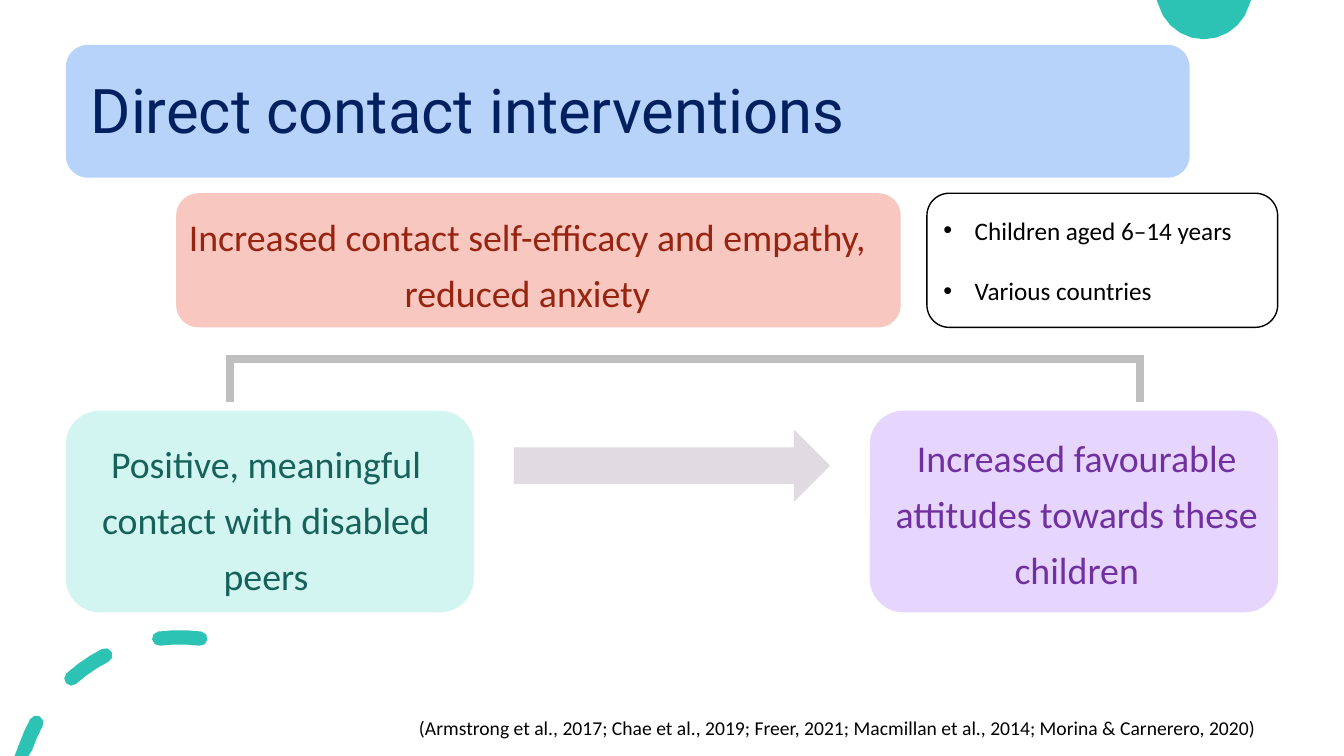
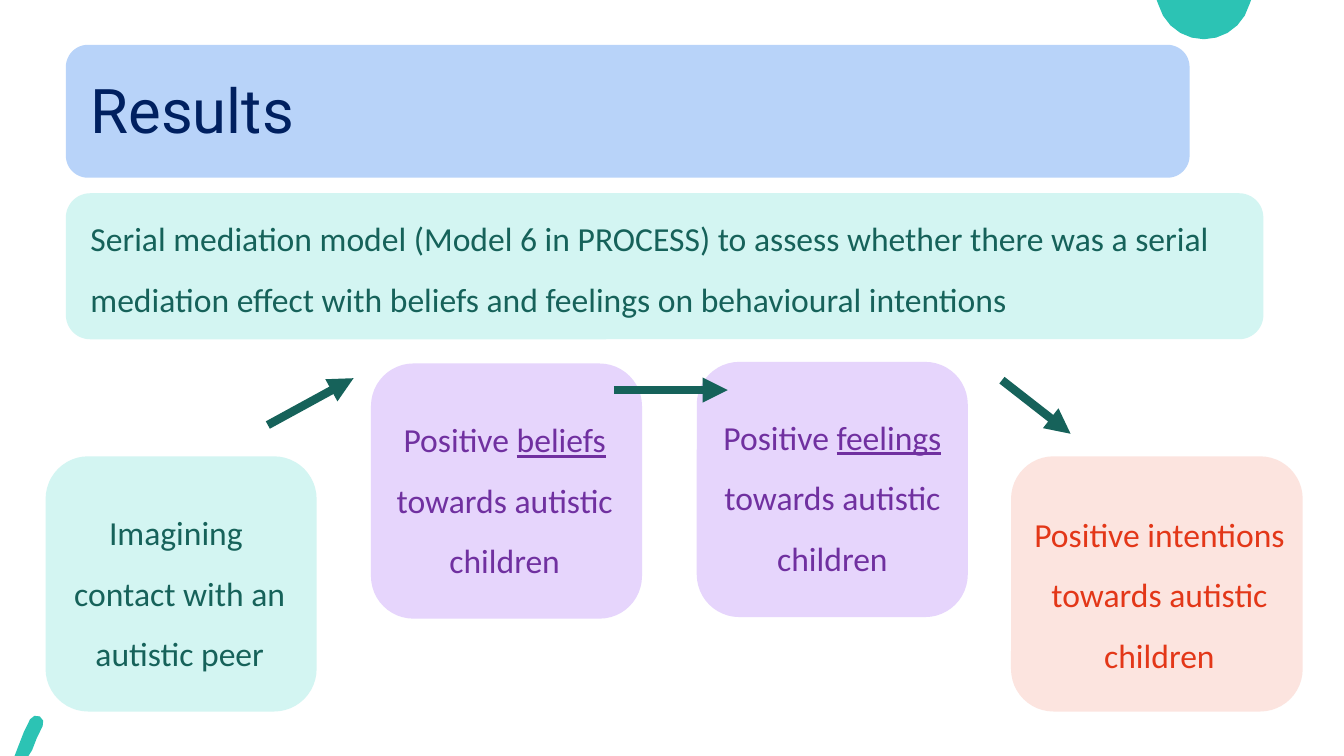
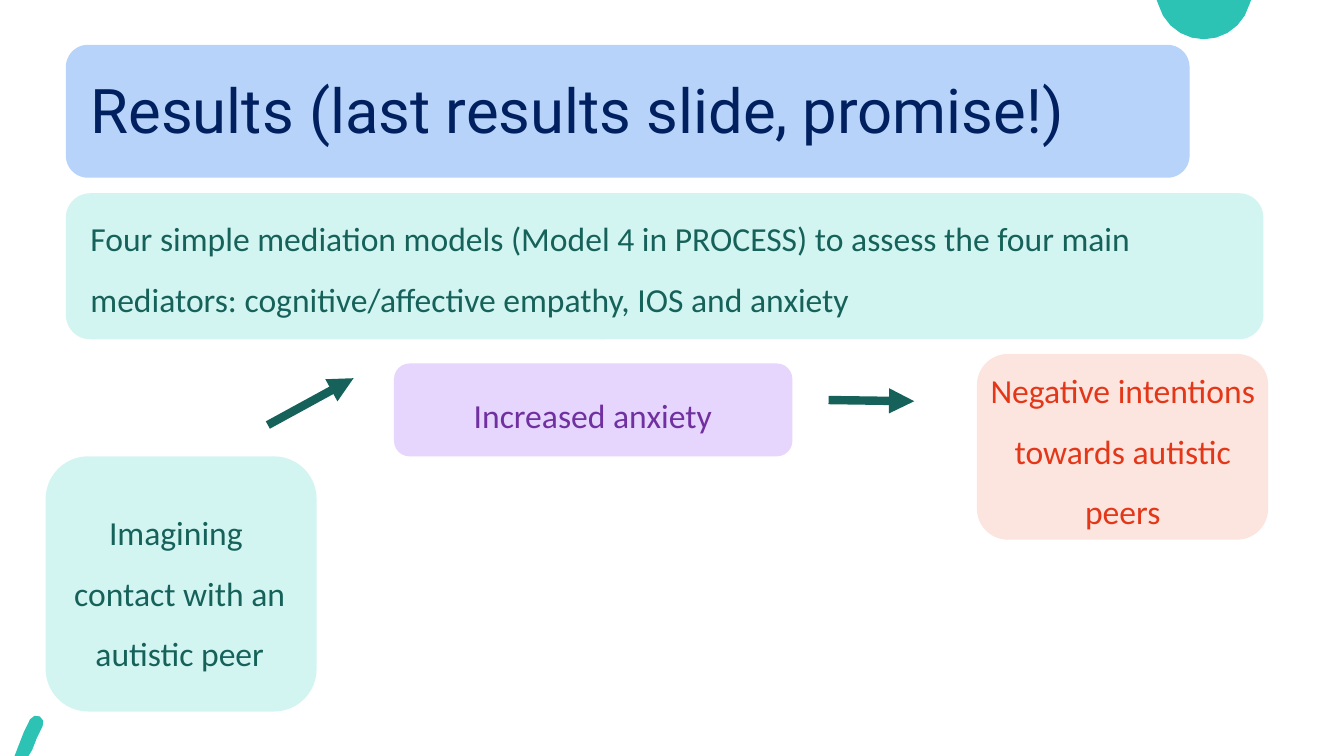
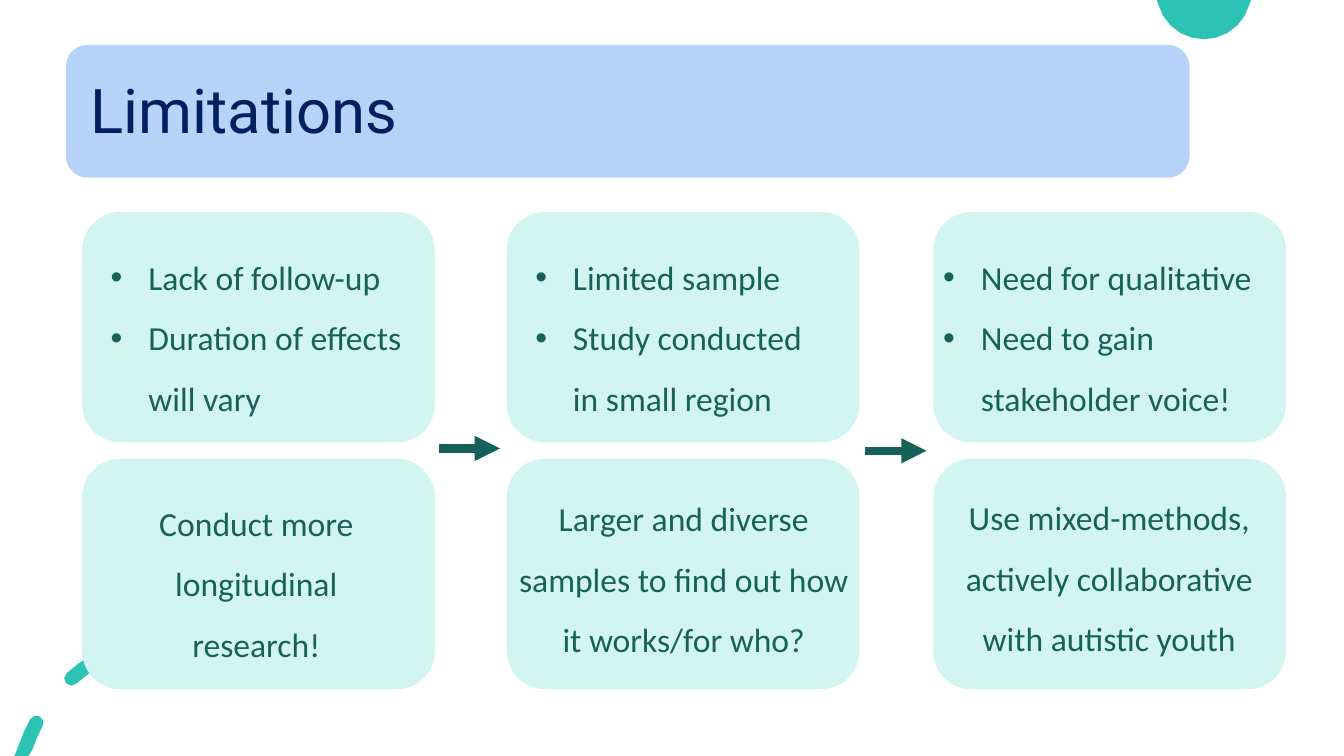
from math import cos, radians, sin

from lxml.etree import SubElement
from pptx import Presentation
from pptx.dml.color import RGBColor
from pptx.enum.shapes import MSO_CONNECTOR, MSO_SHAPE
from pptx.enum.text import MSO_ANCHOR, MSO_AUTO_SIZE, PP_ALIGN
from pptx.oxml.ns import qn
from pptx.util import Cm, Pt

ROUNDED, ARROW = MSO_SHAPE.ROUNDED_RECTANGLE, MSO_SHAPE.RIGHT_ARROW
STRAIGHT = MSO_CONNECTOR.STRAIGHT
LEFT, CENTER = PP_ALIGN.LEFT, PP_ALIGN.CENTER
MIDDLE = MSO_ANCHOR.MIDDLE
NO_AUTOFIT = MSO_AUTO_SIZE.NONE

rgb = RGBColor.from_string
TEAL, BAND_BLUE, NAVY = "2CC3B4", "B8D3F9", "002060"
MINT, GREEN = "D3F5F2", "16625A"
LILAC, PURPLE = "E6D5FC", "7030A0"
PEACH, ORANGE = "FCE4DF", "E33718"
ROSE, RUST = "F8C8C0", "972410"
ARROW_GREY, BRACKET_GREY, BLACK = "DFDBE0", "BFBFBF", "000000"

SLIDE_WIDTH, SLIDE_HEIGHT = 33.87, 19.05
UNDERLINED = {"beliefs", "feelings"}


def add_panel(slide, box, fill, preset=ROUNDED):
    """Add a filled shape without outline; box is left, top, width, height in cm."""
    panel = slide.shapes.add_shape(preset, *map(Cm, box))
    panel.shadow.inherit = False
    panel.fill.solid()
    panel.fill.fore_color.rgb = rgb(fill)
    panel.line.fill.background()
    return panel


def write(frame, paragraphs, colour, size=24, align=CENTER, spacing=1.5,
          font="Calibri", indent=0, gap=0):
    """Fill a text frame; each paragraph is a list of run texts."""
    frame.word_wrap = True
    frame.auto_size = NO_AUTOFIT
    for number, runs in enumerate(paragraphs):
        paragraph = frame.add_paragraph() if number else frame.paragraphs[0]
        paragraph.alignment = align
        paragraph.line_spacing = spacing
        if number and gap:
            paragraph.space_before = Pt(gap)
        if indent:
            properties = paragraph._p.get_or_add_pPr()
            properties.set("marL", str(Cm(indent)))
            properties.set("indent", str(-Cm(indent)))
            SubElement(properties, qn("a:buFont"), typeface="Arial")
            SubElement(properties, qn("a:buChar"), char="•")
        for text in runs:
            run = paragraph.add_run()
            run.text = text
            run.font.name = font
            run.font.size = Pt(size)
            run.font.color.rgb = rgb(colour)
            if text in UNDERLINED:
                run.font.underline = True


prs = Presentation()
prs.slide_width, prs.slide_height = Cm(SLIDE_WIDTH), Cm(SLIDE_HEIGHT)

# Layout: only the title placeholder stays
layout = prs.slide_layouts[5]
for placeholder in list(layout.placeholders):
    if placeholder.placeholder_format.idx:
        layout.shapes.element.remove(placeholder.element)
    else:
        placeholder.left, placeholder.top = Cm(2.03), Cm(1.02)
        placeholder.width, placeholder.height = Cm(29.21), Cm(3.68)

# Slides with their titles
slides = []
for title in ("Direct contact interventions", "Results",
              "Results (last results slide, promise!)", "Limitations"):
    slide = prs.slides.add_slide(layout)
    title_frame = slide.shapes.title.text_frame
    title_frame.vertical_anchor = MIDDLE
    write(title_frame, [[title]], NAVY, 44, LEFT, 0.9, "Roboto")
    slides.append(slide)
contact, serial, simple, limits = slides

# Corner dot, cut off by the top edge
dot = [(30.34 + 1.19 * cos(radians(turn)),
        max(0, -0.2 + 1.19 * sin(radians(turn))))
       for turn in range(0, 181, 15)]

# Round-ended dashes along a circle, cut off by the bottom edge
RADIUS, HALF_WIDTH, HALF_SWEEP, STEP = 4.11, 0.18, 7.25, 34.4
dashes = []
for number in range(3):
    middle = -STEP * number
    start, end = middle - HALF_SWEEP, middle + HALF_SWEEP
    inner = [middle - HALF_SWEEP / 3, middle + HALF_SWEEP / 3]
    trace = [(angle, 0) for angle in inner]
    trace += [(end, turn) for turn in range(0, 181, 45)]
    trace += [(angle, 180) for angle in reversed(inner)]
    trace += [(start, turn) for turn in range(180, 361, 45)]
    dash = []
    for angle, turn in trace:
        a, t = radians(angle), radians(turn)
        reach, along = RADIUS + HALF_WIDTH * cos(t), HALF_WIDTH * sin(t)
        x = 4.53 + reach * sin(a) + along * cos(a)
        y = 20.17 - reach * cos(a) + along * sin(a)
        dash.append((x, min(y, SLIDE_HEIGHT)))
    dashes.append(dash)

# Shared decoration is drawn once and moved to the layout
decoration = []
for contours in ([dot], dashes):
    builder = contact.shapes.build_freeform(*map(Cm, contours[0][0]))
    for contour in contours:
        points = [(Cm(x), Cm(y)) for x, y in contour]
        if contour is not contours[0]:
            builder.move_to(*points[0])
        builder.add_line_segments(points[1:], close=True)
    ornament = builder.convert_to_shape()
    ornament.shadow.inherit = False
    ornament.fill.solid()
    ornament.fill.fore_color.rgb = rgb(TEAL)
    ornament.line.fill.background()
    decoration.append(ornament)
decoration.append(add_panel(contact, (1.66, 1.13, 28.32, 3.35), BAND_BLUE))
for ornament in decoration:
    layout.shapes.element.append(ornament.element)

# Direct contact: cause, mediators and effect
for panel_box, fill, text_box, text, colour in (
    ((1.66, 10.35, 10.28, 5.08), MINT, (1.56, 10.72, 10.29, 5.87),
     "Positive, meaningful contact with disabled peers", GREEN),
    ((21.92, 10.35, 10.29, 5.08), LILAC, (21.99, 10.57, 10.29, 5.87),
     "Increased favourable attitudes towards these children", PURPLE),
    ((4.44, 4.87, 18.26, 3.38), ROSE, (4.35, 5, 17.88, 5.87),
     "Increased contact self-efficacy and empathy, reduced anxiety", RUST),
):
    add_panel(contact, panel_box, fill)
    caption = contact.shapes.add_textbox(*map(Cm, text_box))
    write(caption.text_frame, [[text]], colour, 27, spacing=Pt(40))
add_panel(contact, (12.95, 10.82, 7.97, 1.83), ARROW_GREY, ARROW)

# Direct contact: sample and citation
sample = add_panel(contact, (23.36, 4.87, 8.84, 3.38), "FFFFFF")
sample.fill.background()
sample.line.color.rgb = rgb(BLACK)
sample.line.width = Pt(1)
sample.text_frame.vertical_anchor = MIDDLE
write(sample.text_frame, [["Children aged 6–14 years"], ["Various countries"]],
      BLACK, 18, LEFT, 1.0, indent=0.79, gap=21.5)
citation = contact.shapes.add_textbox(Cm(10.31), Cm(17.92), Cm(23.5), Cm(0.86))
write(citation.text_frame,
      [["(Armstrong et al., 2017; Chae et al., 2019; Freer, 2021; "
        "Macmillan et al., 2014; Morina & Carnerero, 2020)"]],
      BLACK, 14, LEFT, 1.0)

# Results: model summary and starting point on both slides
for slide, summary in (
    (serial, "Serial mediation model (Model 6 in PROCESS) to assess whether there "
             "was a serial mediation effect with beliefs and feelings on "
             "behavioural intentions"),
    (simple, "Four simple mediation models (Model 4 in PROCESS) to assess the four "
             "main mediators: cognitive/affective empathy, IOS and anxiety"),
):
    add_panel(slide, (1.66, 4.87, 30.18, 3.68), MINT)
    model = slide.shapes.add_textbox(Cm(2.03), Cm(4.87), Cm(29.21), Cm(3.15))
    write(model.text_frame, [[summary]], GREEN, align=LEFT)
    add_panel(slide, (1.15, 11.5, 6.83, 6.43), MINT)
    imagining = slide.shapes.add_textbox(Cm(0.57), Cm(12.27), Cm(7.92), Cm(4.67))
    write(imagining.text_frame,
          [["Imagining "], ["contact with an autistic peer"]], GREEN)

# Results: mediators and outcomes
for slide, panel_box, fill, text_box, runs, colour in (
    (serial, (25.48, 11.5, 7.35, 6.43), PEACH, (25.26, 12.31, 7.92, 4.67),
     ["Positive intentions towards autistic children"], ORANGE),
    (serial, (9.35, 9.16, 6.83, 6.43), LILAC, (8.76, 9.93, 7.92, 4.67),
     ["Positive ", "beliefs", " towards autistic children"], PURPLE),
    (serial, (17.56, 9.12, 6.83, 6.43), LILAC, (17.02, 9.87, 7.92, 4.67),
     ["Positive ", "feelings", " towards autistic children"], PURPLE),
    (simple, (24.62, 8.92, 7.34, 4.68), PEACH, (24.51, 8.69, 7.57, 4.67),
     ["Negative intentions towards autistic peers"], ORANGE),
    (simple, (9.93, 9.16, 10.04, 2.34), LILAC, (11.28, 9.33, 7.32, 1.6),
     ["Increased anxiety"], PURPLE),
):
    add_panel(slide, panel_box, fill)
    step = slide.shapes.add_textbox(*map(Cm, text_box))
    write(step.text_frame, [runs], colour)

# Limitations: each column pairs a limitation with a remedy
for left, issue_box, issues, remedy_box, remedy in (
    (2.07, (2.54, 5.84, 7.92, 4.67),
     [["Lack of follow-up"], ["Duration of effects will vary"]],
     (2.5, 12.04, 7.92, 4.67), "Conduct more longitudinal research!"),
    (12.77, (13.24, 5.84, 7.92, 4.67),
     [["Limited sample"], ["Study conducted in small region"]],
     (12.79, 11.92, 8.88, 4.67),
     "Larger and diverse samples to find out how it works/for who?"),
    (23.52, (23.52, 5.84, 8.89, 4.67),
     [["Need for qualitative"], ["Need to gain stakeholder voice!"]],
     (23.75, 11.89, 8.41, 4.67),
     "Use mixed-methods, actively collaborative with autistic youth"),
):
    for top in (5.34, 11.56):
        add_panel(limits, (left, top, 8.89, 5.81), MINT)
    issue_list = limits.shapes.add_textbox(*map(Cm, issue_box))
    write(issue_list.text_frame, issues, GREEN, align=LEFT, indent=0.95)
    remedy_text = limits.shapes.add_textbox(*map(Cm, remedy_box))
    write(remedy_text.text_frame, [[remedy]], GREEN)

# Bracket (grey, plain) and arrows (green, with heads)
for slide, ends, colour in (
    (contact, (5.69, 9.04, 28.83, 9.04), BRACKET_GREY),
    (contact, (5.79, 9.04, 5.79, 10.13), BRACKET_GREY),
    (contact, (28.73, 9.04, 28.73, 10.13), BRACKET_GREY),
    (serial, (6.75, 10.71, 8.91, 9.53), GREEN),
    (serial, (25.25, 9.58, 26.98, 10.93), GREEN),
    (serial, (15.47, 9.83, 18.34, 9.83), GREEN),
    (simple, (6.75, 10.71, 8.91, 9.53), GREEN),
    (simple, (20.88, 10.08, 23.04, 10.11), GREEN),
    (limits, (11.07, 11.3, 12.6, 11.3), GREEN),
    (limits, (21.81, 11.36, 23.35, 11.36), GREEN),
):
    link = slide.shapes.add_connector(STRAIGHT, *map(Cm, ends))
    link.line.color.rgb = rgb(colour)
    link.line.width = Pt(6)
    link_properties = link.element.spPr
    if colour == GREEN:
        SubElement(link_properties.find(qn("a:ln")), qn("a:tailEnd"), type="triangle")
    SubElement(link_properties, qn("a:effectLst"))

prs.save("out.pptx")
